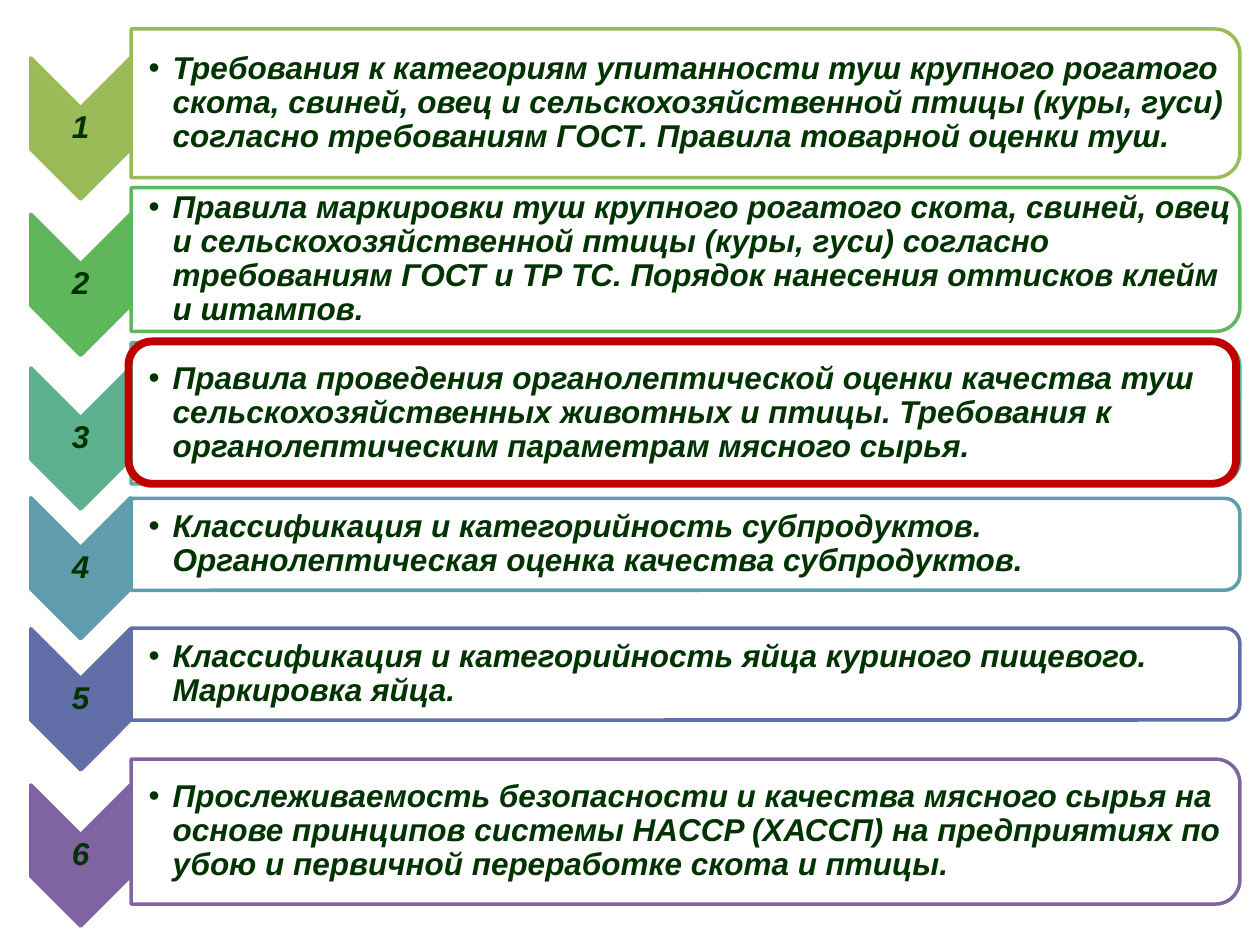
from lxml import etree
from pptx import Presentation
from pptx.dml.color import RGBColor
from pptx.enum.shapes import MSO_SHAPE
from pptx.enum.text import MSO_ANCHOR, PP_ALIGN
from pptx.oxml.ns import qn
from pptx.util import Inches, Pt

CHEVRON = MSO_SHAPE.CHEVRON
PANEL = MSO_SHAPE.ROUND_2_SAME_RECTANGLE
FRAME = MSO_SHAPE.ROUNDED_RECTANGLE
MIDDLE = MSO_ANCHOR.MIDDLE
CENTER, LEFT = PP_ALIGN.CENTER, PP_ALIGN.LEFT

PANEL_LEFT, PANEL_WIDTH = 1.04, 8.8
CHEVRON_LENGTH, CHEVRON_WIDTH, CHEVRON_CENTER = 1.12, 0.79, 0.64
TEXT_COLOR = "003300"

# colour, chevron centre, panel centre, panel height, topic
TOPICS = [
    ("9BBB59", 1.02, 0.82, 1.18,
     "Требования к категориям упитанности туш крупного рогатого скота, свиней, овец и "
     "сельскохозяйственной птицы (куры, гуси) согласно требованиям ГОСТ. "
     "Правила товарной оценки туш."),
    ("5FB65B", 2.26, 2.06, 1.14,
     "Правила маркировки туш крупного рогатого скота, свиней, овец и "
     "сельскохозяйственной птицы (куры, гуси) согласно требованиям ГОСТ и ТР ТС. "
     "Порядок нанесения оттисков клейм и штампов."),
    ("5DB18E", 3.48, 3.28, 1.12,
     "Правила проведения органолептической оценки качества туш сельскохозяйственных "
     "животных и птицы. Требования к органолептическим параметрам мясного сырья."),
    ("5F9DAC", 4.51, 4.32, 0.73,
     "Классификация и категорийность субпродуктов. "
     "Органолептическая оценка качества субпродуктов."),
    ("626EA7", 5.55, 5.35, 0.73,
     "Классификация и категорийность яйца куриного пищевого. Маркировка яйца."),
    ("8064A2", 6.79, 6.6, 1.15,
     "Прослеживаемость безопасности и качества мясного сырья на основе принципов "
     "системы HACCP (ХАССП) на предприятиях по убою и первичной переработке "
     "скота и птицы."),
]

presentation = Presentation()
presentation.slide_width = Inches(10)
presentation.slide_height = Inches(7.5)
slide = presentation.slides.add_slide(presentation.slide_layouts[6])


def add_turned_shape(kind, center_x, center_y, width, height, fill, line):
    """Add a shape turned a quarter clockwise; width and height are before the turn."""
    shape = slide.shapes.add_shape(
        kind, Inches(center_x - width / 2), Inches(center_y - height / 2),
        Inches(width), Inches(height))
    shape.rotation = 90
    shape.shadow.inherit = False
    shape.fill.solid()
    shape.fill.fore_color.rgb = RGBColor.from_string(fill)
    shape.line.color.rgb = RGBColor.from_string(line)
    shape.line.width = Pt(2)
    return shape


def add_label(left, center_y, width, height, text, alignment, left_inset):
    box = slide.shapes.add_textbox(
        Inches(left), Inches(center_y - height / 2), Inches(width), Inches(height))
    frame = box.text_frame
    frame.word_wrap = True
    frame.vertical_anchor = MIDDLE
    frame.margin_left = Inches(left_inset)
    frame.margin_right = frame.margin_top = frame.margin_bottom = Inches(0.01)
    paragraph = frame.paragraphs[0]
    paragraph.alignment = alignment
    paragraph.line_spacing = 0.9
    run = paragraph.add_run()
    run.text = text
    run.font.name = "Arial"
    run.font.size = Pt(18)
    run.font.bold = run.font.italic = True
    run.font.color.rgb = RGBColor.from_string(TEXT_COLOR)
    return paragraph


for number, (color, chevron_y, panel_y, panel_height, topic) in enumerate(TOPICS, 1):
    add_turned_shape(CHEVRON, CHEVRON_CENTER, chevron_y,
                     CHEVRON_LENGTH, CHEVRON_WIDTH, color, color)
    add_label(CHEVRON_CENTER - CHEVRON_WIDTH / 2, chevron_y, CHEVRON_WIDTH, 0.34,
              str(number), CENTER, 0.01)

    panel = add_turned_shape(PANEL, PANEL_LEFT + PANEL_WIDTH / 2, panel_y,
                             panel_height, PANEL_WIDTH, "FFFFFF", color)
    panel_color = panel.fill._xPr.find(qn("a:solidFill"))[0]
    etree.SubElement(panel_color, qn("a:alpha"), val="90000")

    paragraph = add_label(PANEL_LEFT, panel_y, 8.75, panel_height * 0.9, topic, LEFT, 0.14)
    properties = paragraph._p.get_or_add_pPr()
    properties.set("marL", str(Inches(0.19)))
    properties.set("indent", str(Inches(-0.19)))
    etree.SubElement(properties, qn("a:buFont"), typeface="Arial")
    etree.SubElement(properties, qn("a:buChar"), char="•")

highlight = slide.shapes.add_shape(
    FRAME, Inches(1.02), Inches(2.71), Inches(8.79), Inches(1.13))
highlight.shadow.inherit = False
highlight.fill.background()
highlight.line.color.rgb = RGBColor.from_string("C00000")
highlight.line.width = Pt(4.5)

presentation.save("out.pptx")
